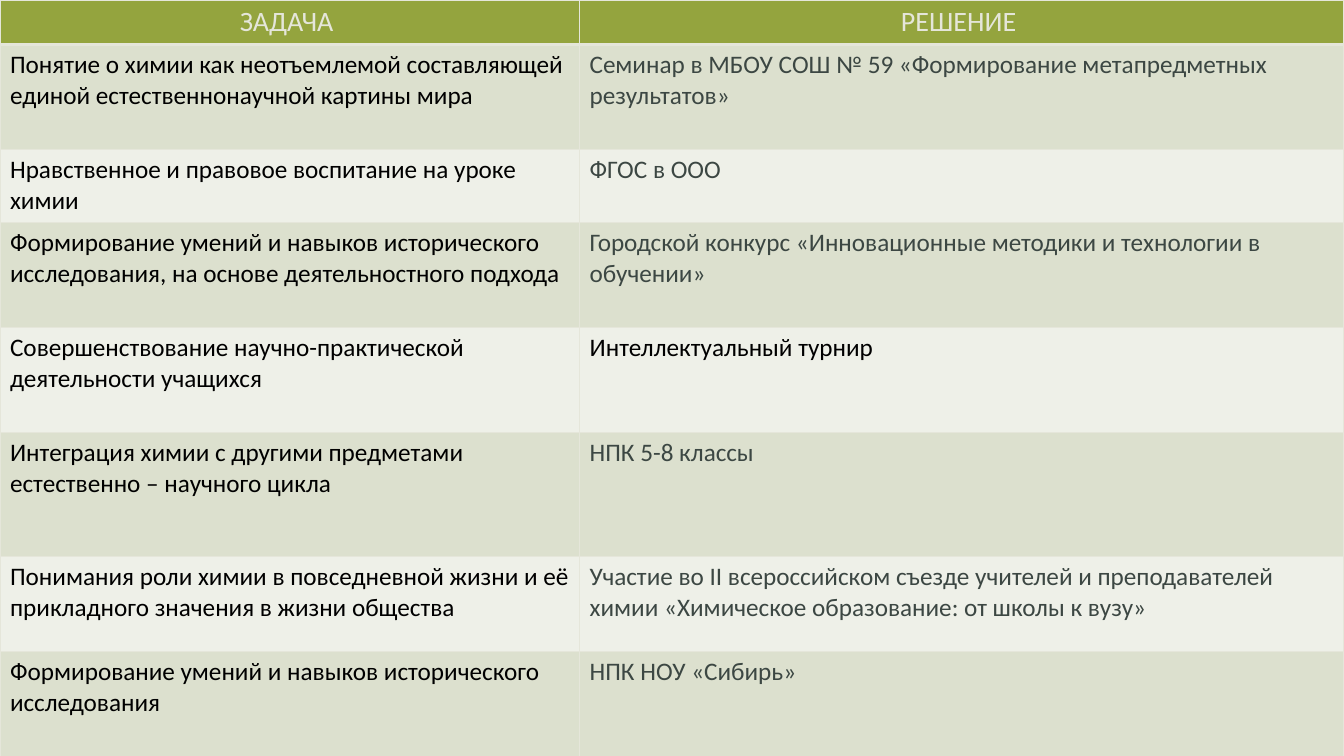
import pptx
import pptx.dml.color
import pptx.enum.text
import pptx.oxml
import pptx.oxml.ns
import pptx.util

HEADINGS = ("ЗАДАЧА ", "РЕШЕНИЕ ")

# task, solution, row height in points
TASKS = [
    ("Понятие о химии как неотъемлемой составляющей единой естественнонаучной картины мира",
     "Семинар в МБОУ СОШ № 59 «Формирование метапредметных результатов»", 75),
    ("Нравственное и правовое воспитание на уроке химии",
     "ФГОС в ООО", 52.5),
    ("Формирование умений и навыков исторического исследования, на основе деятельностного подхода",
     "Городской конкурс «Инновационные методики и технологии в обучении»", 75),
    ("Совершенствование научно-практической деятельности учащихся",
     "Интеллектуальный турнир", 75),
    ("Интеграция химии с другими предметами естественно – научного цикла",
     "НПК 5-8 классы", 88.5),
    ("Понимания роли химии в повседневной жизни и её прикладного значения в жизни общества",
     "Участие во II всероссийском съезде учителей и преподавателей химии "
     "«Химическое образование: от школы к вузу»", 68),
    ("Формирование умений и навыков исторического исследования",
     "НПК НОУ «Сибирь»", 75),
]
BLACK_SOLUTIONS = {"Интеллектуальный турнир"}

THEME = {
    "font": "Calibri", "heading_size": 20, "body_size": 18,
    "paper": "E5E6DA", "heading": "94A43E", "bands": ("DCE0CE", "EEF0E8"),
    "task": "000000", "solution": "3C4743",
}
SLIDE_W, SLIDE_H = 960, 540
TASK_W = 414
HEADING_H = 31.5
LINE_W, HEADING_LINE_W = 1, 3

Pt = pptx.util.Pt
rgb = pptx.dml.color.RGBColor.from_string


def set_borders(cell, bottom):
    tc_pr = cell._tc.get_or_add_tcPr()
    widths = {"lnL": LINE_W, "lnR": LINE_W, "lnT": LINE_W, "lnB": bottom}
    for i, (side, width) in enumerate(widths.items()):
        tc_pr.insert(i, pptx.oxml.parse_xml(
            f'<a:{side} {pptx.oxml.ns.nsdecls("a")} w="{int(Pt(width))}">'
            f'<a:solidFill><a:srgbClr val="{THEME["paper"]}"/></a:solidFill></a:{side}>'))


def fill_cell(cell, text, fill, color, size, align, bottom=LINE_W):
    cell.fill.solid()
    cell.fill.fore_color.rgb = rgb(fill)
    set_borders(cell, bottom)
    p = cell.text_frame.paragraphs[0]
    p.alignment = align
    r = p.add_run()
    r.text = text
    font_format = {"name": THEME["font"], "size": Pt(size), "bold": False}
    for name, value in font_format.items():
        setattr(r.font, name, value)
    r.font.color.rgb = rgb(color)


def main():
    prs = pptx.Presentation()
    prs.slide_width, prs.slide_height = Pt(SLIDE_W), Pt(SLIDE_H)
    s = prs.slides.add_slide(prs.slide_layouts[6])
    s.background.fill.solid()
    s.background.fill.fore_color.rgb = rgb(THEME["paper"])

    heights = [HEADING_H] + [height for _, _, height in TASKS]
    table = s.shapes.add_table(len(heights), 2, 0, 0, Pt(SLIDE_W), Pt(sum(heights))).table
    table.first_row = table.horz_banding = False
    for column, width in zip(table.columns, (TASK_W, SLIDE_W - TASK_W)):
        column.width = Pt(width)
    for row, height in zip(table.rows, heights):
        row.height = Pt(height)

    align = pptx.enum.text.PP_ALIGN
    for col, text in enumerate(HEADINGS):
        fill_cell(table.cell(0, col), text, THEME["heading"], THEME["paper"],
                  THEME["heading_size"], align.CENTER, HEADING_LINE_W)
    for i, (task, solution, _) in enumerate(TASKS):
        solution_color = THEME["task" if solution in BLACK_SOLUTIONS else "solution"]
        for col, (text, color) in enumerate(((task, THEME["task"]), (solution, solution_color))):
            fill_cell(table.cell(i + 1, col), text, THEME["bands"][i % 2], color,
                      THEME["body_size"], align.LEFT)
    prs.save("out.pptx")


if __name__ == "__main__":
    main()
